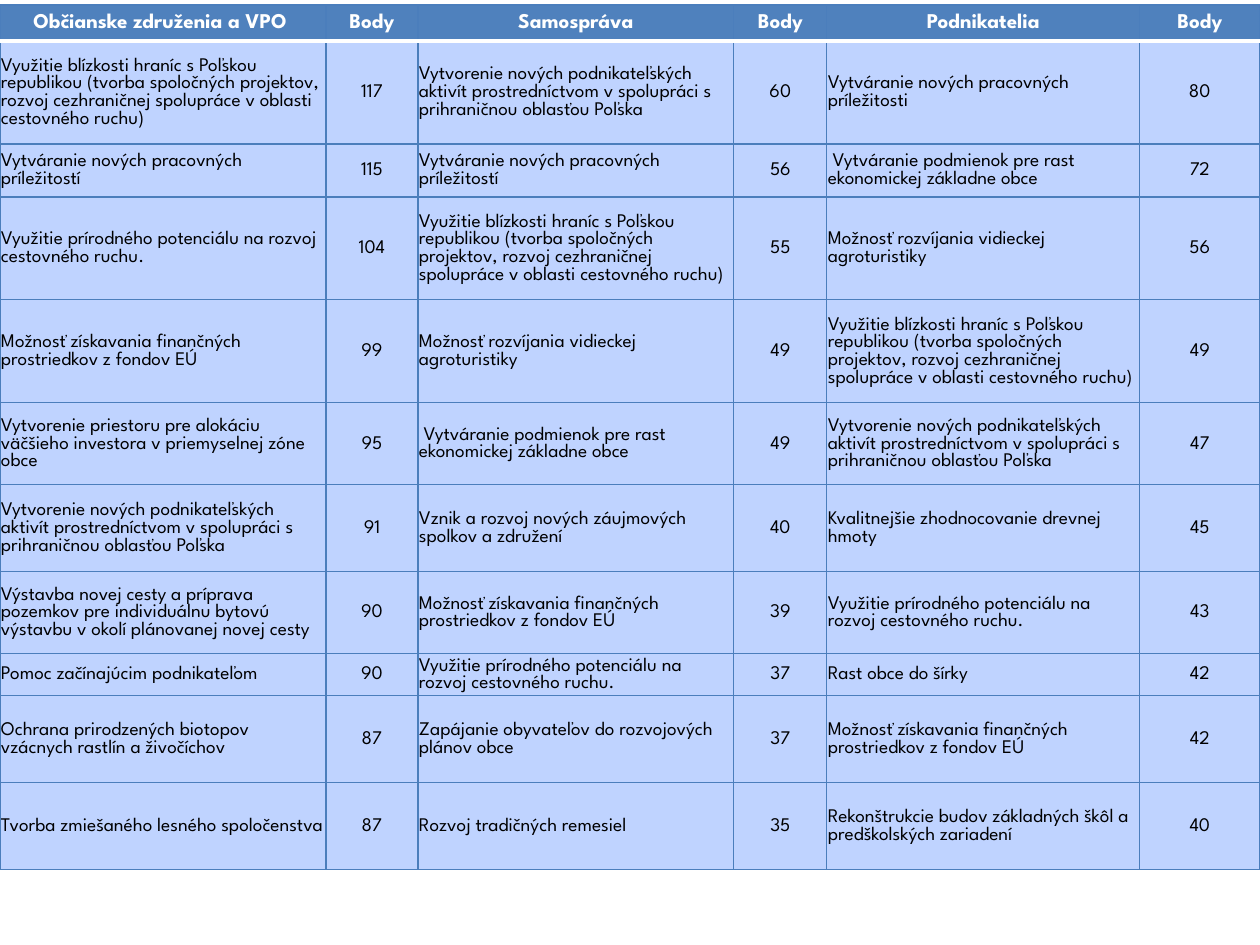
from lxml import etree
from pptx import Presentation
from pptx import util as u
from pptx.dml.color import RGBColor
from pptx.enum import text
from pptx.oxml import ns

PX = 914400 / 126  # EMU per px
FONT = "League Spartan"
HEADER_FILL, BODY_FILL, LINE, WHITE, BLACK = "4F81BD", "BFD3FF", "4B7EBC", "FFFFFF", "000000"

COLS = [326, 92, 316, 93, 313, 120]
ROWS = [36, 103, 53, 103, 103, 82, 87, 82, 42, 87, 87]

# Goals named by more than one group
BORDER = ("Využitie blízkosti hraníc s Poľskou republikou (tvorba spoločných projektov, "
          "rozvoj cezhraničnej spolupráce v oblasti cestovného ruchu)")
BUSINESS = ("Vytvorenie nových podnikateľských aktivít prostredníctvom v spolupráci "
            "s prihraničnou oblasťou Poľska")
JOBS = "Vytváranie nových pracovných príležitostí"
GROWTH = " Vytváranie podmienok pre rast ekonomickej základne obce"
NATURE = "Využitie prírodného potenciálu na rozvoj cestovného ruchu."
FARM_TOURISM = "Možnosť rozvíjania vidieckej agroturistiky"
EU_FUNDS = "Možnosť získavania finančných prostriedkov z fondov EÚ"

HEADER = ["Občianske združenia a VPO ", "Body", "Samospráva", "Body", "Podnikatelia", "Body"]
GOALS = [
    [BORDER, 117, BUSINESS, 60, "Vytváranie nových pracovných príležitosti", 80],
    [JOBS, 115, JOBS, 56, GROWTH, 72],
    [NATURE, 104, BORDER, 55, FARM_TOURISM, 56],
    [EU_FUNDS, 99, FARM_TOURISM, 49, BORDER, 49],
    ["Vytvorenie priestoru pre alokáciu väčšieho investora v priemyselnej zóne obce", 95,
     GROWTH, 49, BUSINESS, 47],
    [BUSINESS, 91, "Vznik a rozvoj nových záujmových spolkov a združení", 40,
     "Kvalitnejšie zhodnocovanie drevnej hmoty", 45],
    ["Výstavba novej cesty a príprava pozemkov pre individuálnu bytovú výstavbu "
     "v okolí plánovanej novej cesty", 90, EU_FUNDS, 39, NATURE, 43],
    ["Pomoc začínajúcim podnikateľom", 90, NATURE, 37, "Rast obce do šírky", 42],
    ["Ochrana prirodzených biotopov vzácnych rastlín a živočíchov", 87,
     "Zapájanie obyvateľov do rozvojových plánov obce", 37, EU_FUNDS, 42],
    ["Tvorba zmiešaného lesného spoločenstva", 87, "Rozvoj tradičných remesiel", 35,
     "Rekonštrukcie budov základných škôl a predškolských zariadení", 40],
]


def px(n):
    return u.Emu(round(n * PX))


def color(value):
    return RGBColor.from_string(value)


def write(tf, content, size=11, fill=BLACK, bold=False, center=False):
    tf.word_wrap = True
    p = tf.paragraphs[0]
    p.alignment = text.PP_ALIGN.CENTER if center else text.PP_ALIGN.LEFT
    r = p.add_run()
    r.text = content
    r.font.name, r.font.size, r.font.bold = FONT, u.Pt(size), bold
    r.font.color.rgb = color(fill)


def border(cell, side, value=LINE, width=0.75):
    ln = etree.SubElement(cell._tc.get_or_add_tcPr(), ns.qn(f"a:ln{side}"), w=str(u.Pt(width)))
    solid = etree.SubElement(ln, ns.qn("a:solidFill"))
    etree.SubElement(solid, ns.qn("a:srgbClr"), val=value)


def format_cell(cell, fill, white_side=None):
    cell.margin_left = cell.margin_right = cell.margin_top = px(1)
    cell.margin_bottom = 0
    cell.vertical_anchor = text.MSO_ANCHOR.MIDDLE
    # Borders come before the fill in the cell properties
    for side in "LRTB":
        if side == white_side:
            border(cell, side, WHITE, 2)
        else:
            border(cell, side)
    cell.fill.solid()
    cell.fill.fore_color.rgb = color(fill)


def add_goal_table(s):
    frame = s.shapes.add_table(len(ROWS), len(COLS), 0, px(5), px(sum(COLS)), px(sum(ROWS)))
    table = frame.table
    table.first_row = table.horz_banding = False
    for column, width in zip(table.columns, COLS):
        column.width = px(width)
    for row, height in zip(table.rows, ROWS):
        row.height = px(height)

    # Header row, with a white rule beneath
    for c, title in enumerate(HEADER):
        cell = table.cell(0, c)
        format_cell(cell, HEADER_FILL, "B")
        write(cell.text_frame, title, size=12, fill=WHITE, bold=True, center=True)

    # Goals on the left, centred points beside them
    for r, goals in enumerate(GOALS, 1):
        for c, value in enumerate(goals):
            cell = table.cell(r, c)
            format_cell(cell, BODY_FILL, "T" if r == 1 else None)
            write(cell.text_frame, str(value), center=c % 2 == 1)


def main():
    prs = Presentation()
    prs.slide_width, prs.slide_height = px(1260), px(945)
    s = prs.slides.add_slide(prs.slide_layouts[6])
    add_goal_table(s)
    prs.save("out.pptx")


if __name__ == "__main__":
    main()
